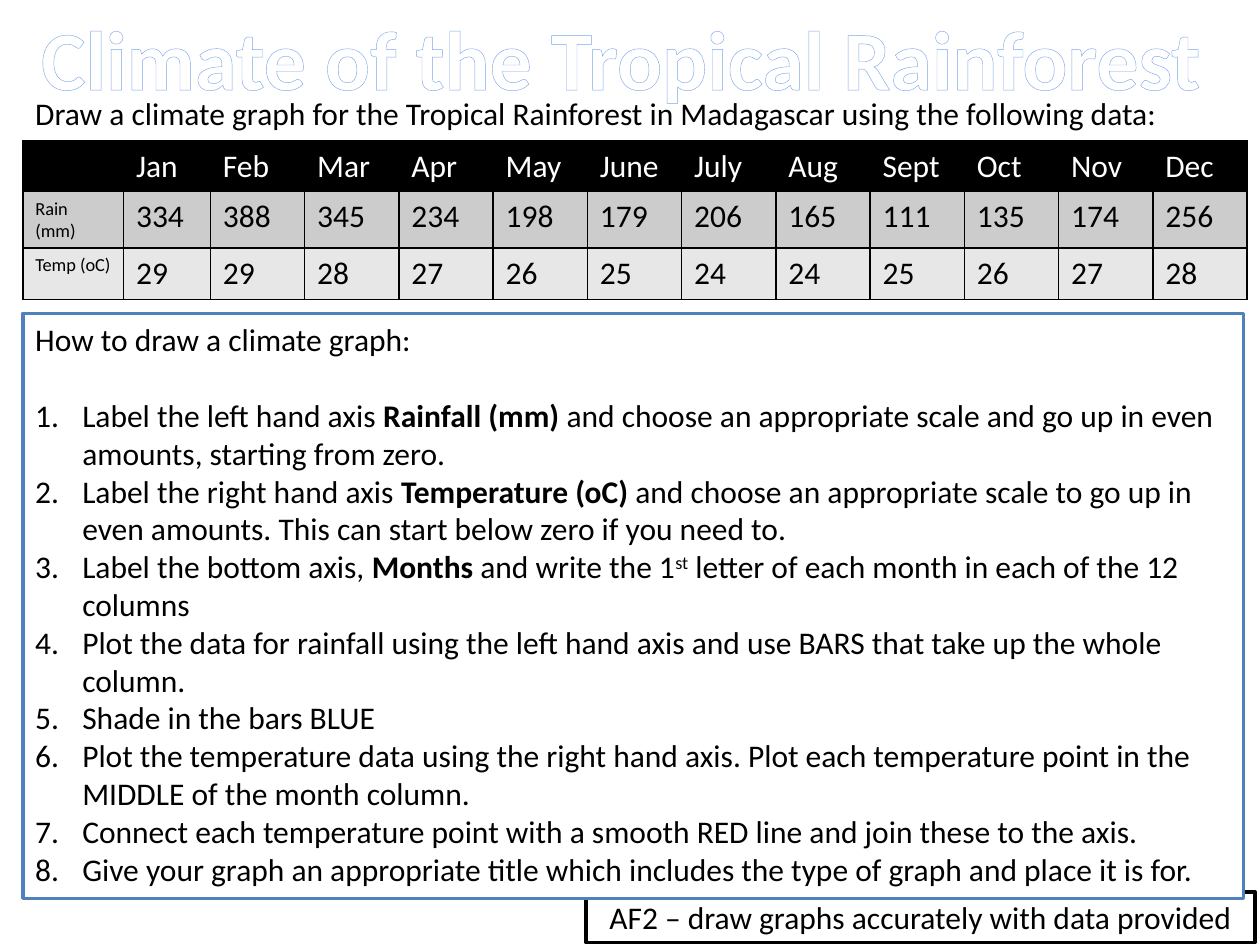
from lxml.etree import SubElement
from pptx import Presentation
from pptx.dml.color import RGBColor
from pptx.enum.shapes import MSO_SHAPE as SHAPE
from pptx.enum.text import MSO_ANCHOR as ANCHOR, MSO_AUTO_SIZE as AUTO, PP_ALIGN as ALIGN
from pptx.oxml.ns import qn
from pptx.util import Cm, Pt

COLORS = {
    "black": "000000", "white": "FFFFFF", "blue": "4F81BD",
    "outline": "7EA6EA", "rain": "CCCCCC", "temp": "E7E7E7",
}
FONT = "Calibri"
TITLE = "Climate of the Tropical Rainforest"
INTRO = "Draw a climate graph for the Tropical Rainforest in Madagascar using the following data:"
OBJECTIVE = "AF2 – draw graphs accurately with data provided"
CLIMATE = [
    ["", "Jan", "Feb", "Mar", "Apr", "May", "June", "July", "Aug", "Sept", "Oct", "Nov", "Dec"],
    ["Rain (mm)", 334, 388, 345, 234, 198, 179, 206, 165, 111, 135, 174, 256],
    ["Temp (oC)", 29, 29, 28, 27, 26, 25, 24, 24, 25, 26, 27, 28],
]
ROW_STYLES = [("black", "white", 0.79), ("rain", "black", 1.04), ("temp", "black", 1.04)]
COL_WIDTHS = [2.03, 1.75] + [1.9] * 11
HEADING = "How to draw a climate graph:"
STEPS = [
    [("Label the left hand axis ", ""), ("Rainfall (mm)", "bold"),
     (" and choose an appropriate scale and go up in even amounts, starting from zero.", "")],
    [("Label the right hand axis ", ""), ("Temperature (oC)", "bold"),
     (" and choose an appropriate scale to go up in even amounts. "
      "This can start below zero if you need to.", "")],
    [("Label the bottom axis, ", ""), ("Months", "bold"), (" and write the 1", ""),
     ("st", "super"), (" letter of each month in each of the 12 columns", "")],
    [("Plot the data for rainfall using the left hand axis and use BARS "
      "that take up the whole column.", "")],
    [("Shade in the bars BLUE", "")],
    [("Plot the temperature data using the right hand axis. Plot each temperature point "
      "in the MIDDLE of the month column.", "")],
    [("Connect each temperature point with a smooth RED line and join these to the axis.", "")],
    [("Give your graph an appropriate title which includes the type of graph "
      "and place it is for.", "")],
]
LEFT, WIDTH = 0.46, 24.61


def rgb(name):
    return RGBColor.from_string(COLORS[name])


def style(r, size=18, color="black", bold=False):
    r.font.name, r.font.size, r.font.bold = FONT, Pt(size), bold
    r.font.color.rgb = rgb(color)


def add_fill(parent, color):
    SubElement(SubElement(parent, qn("a:solidFill")), qn("a:srgbClr"), val=COLORS[color])


def add_label(s, box, text, size=18, color="black", bold=False, align=ALIGN.LEFT):
    tf = s.shapes.add_textbox(*map(Cm, box)).text_frame
    tf.text, tf.word_wrap, tf.auto_size = text, False, AUTO.SHAPE_TO_FIT_TEXT
    p = tf.paragraphs[0]
    p.alignment = align
    style(p.runs[0], size, color, bold)
    return p.runs[0]


def add_panel(s, box, line, text, align):
    sp = s.shapes.add_shape(SHAPE.RECTANGLE, *map(Cm, box))
    sp.shadow.inherit = False
    sp.fill.solid()
    sp.fill.fore_color.rgb = rgb("white")
    sp.line.color.rgb, sp.line.width = rgb(line), Pt(2)
    tf = sp.text_frame
    tf.text, tf.word_wrap, tf.auto_size = text, True, AUTO.SHAPE_TO_FIT_TEXT
    tf.vertical_anchor = ANCHOR.TOP
    tf.paragraphs[0].alignment = align
    style(tf.paragraphs[0].runs[0])
    return tf


def add_steps(tf):
    for i, step in enumerate(STEPS):
        p = tf.add_paragraph()
        p.alignment = ALIGN.LEFT
        p.space_before = Pt(0 if i else 22)
        pPr = p._p.get_or_add_pPr()
        indent = Cm(0.95)
        pPr.set("marL", str(indent))
        pPr.set("indent", str(-indent))
        SubElement(pPr, qn("a:buFont"), typeface="+mj-lt")
        SubElement(pPr, qn("a:buAutoNum"), type="arabicPeriod")
        for text, kind in step:
            r = p.add_run()
            r.text = text
            style(r, bold=kind == "bold")
            if kind == "super":
                r.font._element.set("baseline", "30000")


def add_climate_table(s):
    height = sum(h for _, _, h in ROW_STYLES)
    box = map(Cm, (LEFT, 2.84, WIDTH, height))
    table = s.shapes.add_table(len(CLIMATE), len(COL_WIDTHS), *box).table
    for col, width in zip(table.columns, COL_WIDTHS):
        col.width = Cm(width)
    for row, values, (fill, color, height) in zip(table.rows, CLIMATE, ROW_STYLES):
        row.height = Cm(height)
        for j, (cell, value) in enumerate(zip(row.cells, values)):
            cell.text = str(value)
            for r in cell.text_frame.paragraphs[0].runs:
                style(r, 18 if j else 10.5, color)
            tcPr = cell._tc.get_or_add_tcPr()
            for side in ("a:lnL", "a:lnR", "a:lnT", "a:lnB"):
                add_fill(SubElement(tcPr, qn(side), w=str(Pt(1))), "black")
            cell.fill.solid()
            cell.fill.fore_color.rgb = rgb(fill)


def outline_text(r, color, width):
    rPr = r.font._element
    ln = SubElement(rPr, qn("a:ln"), w=str(Pt(width)))
    add_fill(ln, color)
    rPr.insert(0, ln)


def main():
    prs = Presentation()
    prs.slide_width, prs.slide_height = Cm(25.4), Cm(19.05)
    s = prs.slides.add_slide(prs.slide_layouts[6])

    title = add_label(s, (LEFT, 0, 24.13, 2.31), TITLE, 48, "white", True, ALIGN.CENTER)
    outline_text(title, "outline", 2.48)
    add_label(s, (LEFT, 1.78, 23.16, 5.64), INTRO)
    add_panel(s, (11.81, 17.98, 13.49, 1.02), "black", OBJECTIVE, ALIGN.CENTER)
    add_climate_table(s)
    add_steps(add_panel(s, (LEFT, 6.32, WIDTH, 11.79), "blue", HEADING, ALIGN.LEFT))
    prs.save("out.pptx")


if __name__ == "__main__":
    main()
